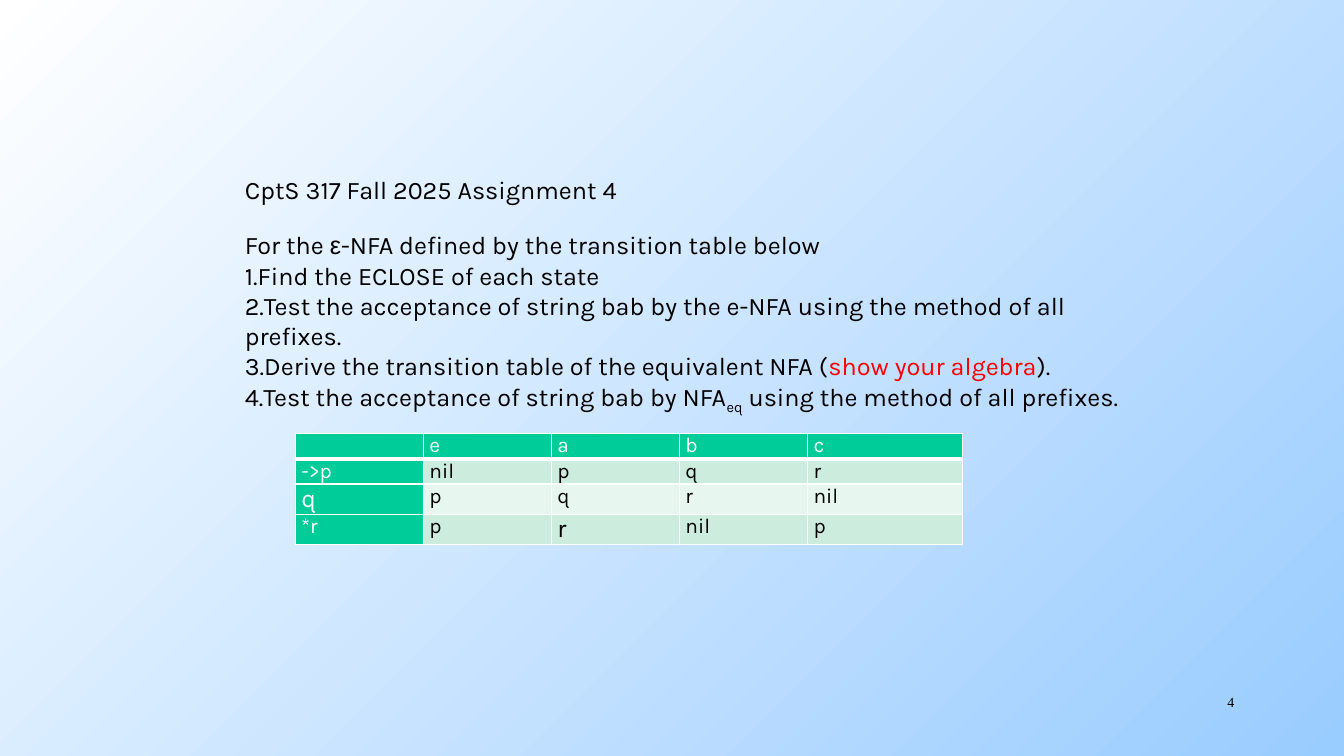
from dataclasses import dataclass
from lxml import etree
from pptx import Presentation
from pptx.dml.color import RGBColor
from pptx.enum.text import MSO_ANCHOR, PP_ALIGN
from pptx.oxml.ns import qn
from pptx.util import Inches, Pt

MIDDLE, RIGHT = MSO_ANCHOR.MIDDLE, PP_ALIGN.RIGHT


@dataclass(frozen=True)
class Theme:
    font: str = "Karla"
    greek: str = "Arial"
    serif: str = "Times New Roman"
    ink: str = "000000"
    white: str = "FFFFFF"
    red: str = "FF0000"
    sky: str = "99CCFF"
    head: str = "00CC99"
    bands: tuple = ("E7F6EF", "CCECDE")
    body: float = 18
    small: float = 15
    tiny: float = 10
    gap: float = 18


T = Theme()

# Content: each line is a list of (text, style) parts
LINES = [
    [("CptS 317 Fall 2025 Assignment 4", "")],
    [("For the ", ""), ("ε", "greek"),
     ("-NFA defined by the transition table below", "")],
    [("1.Find the ECLOSE of each state", "")],
    [("2.Test the acceptance of string bab by the e-NFA using the method "
      "of all prefixes.", "")],
    [("3.Derive the transition table of the equivalent NFA (", ""),
     ("show your algebra", "red"), (").", "")],
    [("4.Test the acceptance of string bab by NFA", ""), ("eq", "sub"),
     (" using the method of all prefixes.", "")],
]
MOVES = [
    ["", "e", "a", "b", "c"],
    ["->p", "nil", "p", "q", "r"],
    ["q", "p", "q", "r", "nil"],
    ["*r", "p", "r", "nil", "p"],
]
LARGE = {(2, 0), (3, 2)}  # cells in body size
PAGE = "4"

# Layout in inches
SIZE = (13.33, 7.5)
TEXT = (2.33, 1.89, 9.25, 2.07)
GRID = (2.93, 4.3)
COLS = [1.27] * 4 + [1.54]
ROWS = [0.25] * 2 + [0.3] * 2
FOOT = (9.56, 6.83, 2.78, 0.5)


def style(run, size, color=T.ink, font=T.font):
    run.font.size = Pt(size)
    run.font.name = font
    run.font.color.rgb = RGBColor.from_string(color)


def add_box(slide, place):
    frame = slide.shapes.add_textbox(*map(Inches, place)).text_frame
    frame.word_wrap = True
    return frame


def edge(cell, last):
    """Draw white lines on all four sides of a cell."""
    props = cell._tc.get_or_add_tcPr()
    for i, side in enumerate("LRTB"):
        width = last if side == "B" else 1
        line = etree.Element(qn("a:ln" + side), w=str(Pt(width)))
        fill = etree.SubElement(line, qn("a:solidFill"))
        etree.SubElement(fill, qn("a:srgbClr"), val=T.white)
        props.insert(i, line)


def add_back(slide):
    fill = slide.background.fill
    fill.gradient()
    fill.gradient_angle = 315
    for stop, color, spot in zip(fill.gradient_stops, (T.white, T.sky), (0, 1)):
        stop.color.rgb = RGBColor.from_string(color)
        stop.position = spot


def add_task(slide):
    frame = add_box(slide, TEXT)
    frame.vertical_anchor = MIDDLE
    frame.margin_top = frame.margin_bottom = 0
    for i, parts in enumerate(LINES):
        para = frame.add_paragraph() if i else frame.paragraphs[0]
        if i == 1:
            para.space_before = Pt(T.gap)
        for text, kind in parts:
            run = para.add_run()
            run.text = text
            style(run, T.body, T.red if kind == "red" else T.ink,
                  T.greek if kind == "greek" else T.font)
            if kind == "sub":
                run._r.get_or_add_rPr().set("baseline", "-25000")


def add_moves(slide):
    table = slide.shapes.add_table(
        len(ROWS), len(COLS), *map(Inches, GRID),
        Inches(sum(COLS)), Inches(sum(ROWS))).table
    for col, width in zip(table.columns, COLS):
        col.width = Inches(width)
    for row, height in zip(table.rows, ROWS):
        row.height = Inches(height)
    for r, words in enumerate(MOVES):
        for c, word in enumerate(words):
            cell = table.cell(r, c)
            head = r == 0 or c == 0
            cell.margin_left = cell.margin_right = Inches(0.06)
            cell.margin_top = cell.margin_bottom = 0
            cell.fill.solid()
            cell.fill.fore_color.rgb = RGBColor.from_string(
                T.head if head else T.bands[r % 2])
            edge(cell, 1 if r else 3)
            para = cell.text_frame.paragraphs[0]
            if word:
                para.text = word
                style(para.runs[0], T.body if (r, c) in LARGE else T.small,
                      T.white if head else T.ink)
            else:
                etree.SubElement(para._p, qn("a:endParaRPr"),
                                 sz=str(int(T.small * 100)))


def add_page(slide):
    para = add_box(slide, FOOT).paragraphs[0]
    para.text = PAGE
    para.alignment = RIGHT
    style(para.runs[0], T.tiny, font=T.serif)


def main():
    deck = Presentation()
    deck.slide_width, deck.slide_height = map(Inches, SIZE)
    slide = deck.slides.add_slide(deck.slide_layouts[6])
    add_back(slide)
    add_page(slide)
    add_moves(slide)
    add_task(slide)
    deck.save("out.pptx")


if __name__ == "__main__":
    main()
